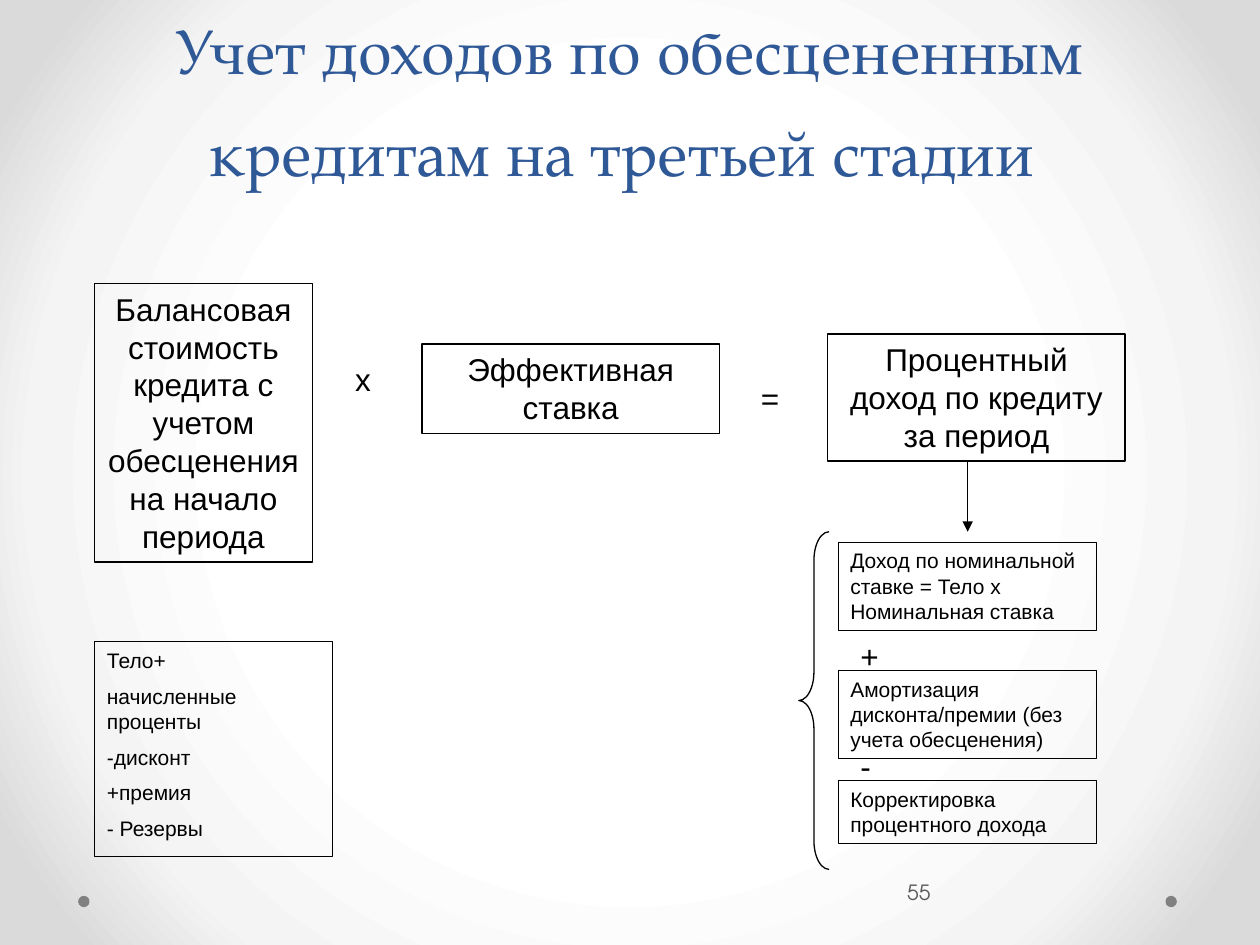
from lxml.etree import SubElement
from pptx import Presentation
from pptx.dml.color import RGBColor
from pptx.enum.shapes import MSO_CONNECTOR, MSO_SHAPE
from pptx.enum.text import MSO_ANCHOR, MSO_AUTO_SIZE, PP_ALIGN
from pptx.oxml import parse_xml
from pptx.oxml.ns import nsdecls, qn
from pptx.util import Inches, Pt

BLACK = "000000"
STOPS = [(50, "FFFFFF"), (76, "F4F4F4"), (92, "DADADA")]


def color(value):
    return RGBColor.from_string(value)


def apply(obj, values):
    for name, value in values.items():
        setattr(obj, name, value)


def set_text(sp, paragraphs, size, align=PP_ALIGN.LEFT, font="Arial", fill=BLACK, **frame):
    tf = sp.text_frame
    apply(tf, {"word_wrap": True, "vertical_anchor": MSO_ANCHOR.TOP, **frame})
    for i, text in enumerate(paragraphs):
        p = tf.add_paragraph() if i else tf.paragraphs[0]
        apply(p, {"alignment": align, "space_before": Pt(6 if i else 0)})
        r = p.add_run()
        r.text = text
        apply(r.font, {"name": font, "size": Pt(size)})
        r.font.color.rgb = color(fill)


def add_shape(slide, kind, box, fill=None, line=None):
    sp = slide.shapes.add_shape(kind, *map(Inches, box))
    sp.shadow.inherit = False
    if fill:
        sp.fill.solid()
        sp.fill.fore_color.rgb = color(fill)
    else:
        sp.fill.background()
    if line:
        sp.line.color.rgb = color(BLACK)
        sp.line.width = Pt(line)
    else:
        sp.line.fill.background()
    return sp


def add_box(slide, box, paragraphs, size=18, align=PP_ALIGN.CENTER, line=0.75):
    sp = add_shape(slide, MSO_SHAPE.RECTANGLE, box, line=line)
    set_text(sp, paragraphs, size, align, auto_size=MSO_AUTO_SIZE.SHAPE_TO_FIT_TEXT)


def add_sign(slide, x, y, text):
    sp = slide.shapes.add_textbox(*map(Inches, (x, y, 0.71, 0.4)))
    set_text(sp, [text], 18, auto_size=MSO_AUTO_SIZE.SHAPE_TO_FIT_TEXT)


def add_arrow(slide, x, top, bottom):
    line = slide.shapes.add_connector(
        MSO_CONNECTOR.STRAIGHT, *map(Inches, (x, top, x, bottom)))
    line.line.color.rgb = color(BLACK)
    line.line.width = Pt(0.75)
    SubElement(line.line._get_or_add_ln(), qn("a:tailEnd"), type="triangle")
    SubElement(line._element.spPr, qn("a:effectLst"))


def add_background(slide):
    stops = "".join(
        f'<a:gs pos="{pos * 1000}"><a:srgbClr val="{value}"/></a:gs>' for pos, value in STOPS)
    bg = parse_xml(
        f'<p:bg {nsdecls("p", "a")}><p:bgPr><a:gradFill rotWithShape="1">'
        f'<a:gsLst>{stops}</a:gsLst><a:path path="circle">'
        '<a:fillToRect l="50000" t="50000" r="50000" b="50000"/></a:path>'
        '</a:gradFill><a:effectLst/></p:bgPr></p:bg>')
    slide._element.cSld.insert(0, bg)


def add_title(slide, x, y, w, h):
    title = slide.shapes.title
    apply(title, dict(zip(("left", "top", "width", "height"), map(Inches, (x, y, w, h)))))
    set_text(title, ["Учет доходов по обесцененным кредитам на третьей стадии "], 36,
             PP_ALIGN.CENTER, "TeX Gyre Pagella", "2F5897",
             vertical_anchor=MSO_ANCHOR.BOTTOM, auto_size=MSO_AUTO_SIZE.NONE)
    title.text_frame.paragraphs[0].line_spacing = Pt(58)


def add_footer(slide, x, y):
    for dot_x in (x, x + 8.63):
        add_shape(slide, MSO_SHAPE.OVAL, (dot_x, y + 0.28, 0.09, 0.09), fill="808080")
    sp = slide.shapes.add_textbox(*map(Inches, (x + 6.55, y, 2.33, 0.5)))
    set_text(sp, ["55"], 12, font="TeX Gyre Adventor", fill="595959",
             vertical_anchor=MSO_ANCHOR.MIDDLE, margin_left=Inches(0.03),
             margin_right=Inches(0.05))


def add_formula(slide, x, y):
    add_box(slide, (x, y, 1.73, 2.21),
            ["Балансовая стоимость кредита с учетом обесценения на начало периода"])
    add_sign(slide, x + 1.97, y + 0.56, "х")
    add_box(slide, (x + 2.6, y + 0.48, 2.36, 0.71), ["Эффективная ставка"])
    add_sign(slide, x + 5.19, y + 0.71, "=")
    add_box(slide, (x + 5.82, y + 0.4, 2.36, 1.01), ["Процентный доход по кредиту за период"])


def add_balance(slide, x, y, w, h):
    add_box(slide, (x, y, w, h),
            ["Тело+", "начисленные проценты", "-дисконт", "+премия", "- Резервы"],
            12, PP_ALIGN.LEFT)


def add_income(slide, x, y, h):
    add_arrow(slide, x + 1.34, y - 0.55, y)
    brace = add_shape(slide, MSO_SHAPE.LEFT_BRACE, (x, y, 0.24, h), line=0.75)
    brace.adjustments[0] = 0.945
    brace.adjustments[1] = 0.5
    parts = [
        (0.08, 0.7, "Доход по номинальной ставке = Тело х Номинальная ставка"),
        (1.1, 0.7, "Амортизация дисконта/премии (без учета обесценения)"),
        (1.97, 0.5, "Корректировка процентного дохода"),
    ]
    for top, height, text in parts:
        add_box(slide, (x + 0.31, y + top, 2.05, height), [text], 12, PP_ALIGN.LEFT, 0.25)
    for (top, _, _), sign in zip(parts[1:], "+-"):
        add_sign(slide, x + 0.39, y + top - 0.31, sign)


def main():
    prs = Presentation()
    apply(prs, {"slide_width": Inches(10), "slide_height": Inches(7.5)})
    slide = prs.slides.add_slide(prs.slide_layouts[5])
    add_background(slide)
    add_title(slide, 0.5, 0.3, 9, 1.25)
    add_footer(slide, 0.62, 6.83)
    add_formula(slide, 0.75, 2.25)
    add_balance(slide, 0.75, 5.09, 1.89, 1.71)
    add_income(slide, 6.34, 4.22, 2.68)
    prs.save("out.pptx")


if __name__ == "__main__":
    main()
